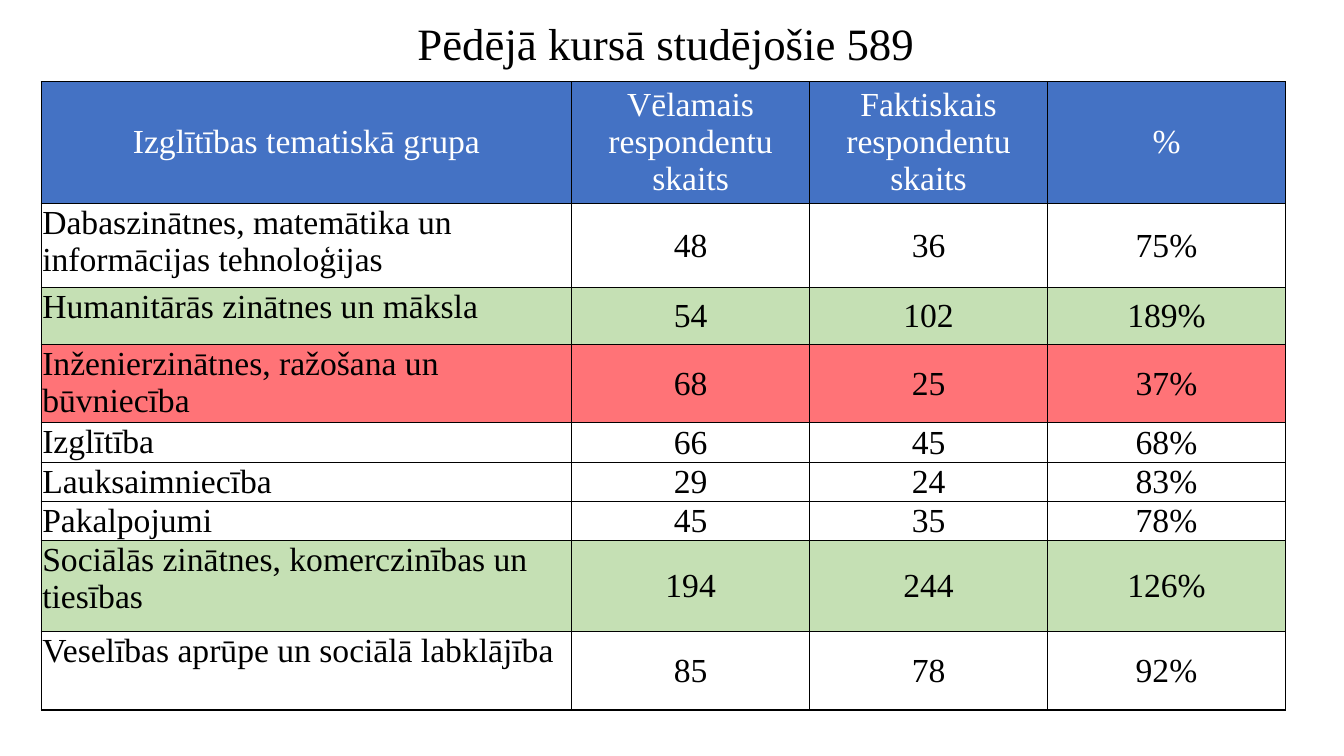
from lxml.etree import SubElement
from pptx import Presentation
from pptx.dml.color import RGBColor
from pptx.enum.text import MSO_ANCHOR, PP_ALIGN
from pptx.oxml.ns import qn
from pptx.util import Inches, Pt

SLIDE_WIDTH, SLIDE_HEIGHT = Inches(13.33), Inches(7.5)
GRID_COLUMNS, GRID_ROWS = 1333, 750
FONT = "Times New Roman"
BLACK, WHITE = "000000", "FFFFFF"
BLUE, GREEN, RED = "4472C4", "C5E0B4", "FF7377"

HEADINGS = ["Izglītības tematiskā grupa", "Vēlamais respondentu skaits",
            "Faktiskais respondentu skaits", "%"]
# Thematic group, wanted respondents, actual respondents, row height
GROUPS = [
    ("Dabaszinātnes, matemātika un informācijas tehnoloģijas", 48, 36, 84),
    ("Humanitārās zinātnes un māksla", 54, 102, 56),
    ("Inženierzinātnes, ražošana un būvniecība", 68, 25, 78),
    ("Izglītība", 66, 45, 39),
    ("Lauksaimniecība", 29, 24, 39),
    ("Pakalpojumi", 45, 35, 39),
    ("Sociālās zinātnes, komerczinības un tiesības", 194, 244, 90),
    ("Veselības aprūpe un sociālā labklājība", 85, 78, 78),
]
HEADER_HEIGHT = 101
COLUMN_WIDTHS = [526, 236, 236, 236]


def across(columns):
    return round(SLIDE_WIDTH * columns / GRID_COLUMNS)


def down(rows):
    return round(SLIDE_HEIGHT * rows / GRID_ROWS)


def color(hex_code):
    return RGBColor.from_string(hex_code)


def write(para, text, size, hex_code, align):
    para.alignment = align
    span = para.add_run()
    span.text = text
    span.font.name = FONT
    span.font.size = Pt(size)
    span.font.bold = False
    span.font.color.rgb = color(hex_code)


def add_borders(cell):
    properties = cell._tc.get_or_add_tcPr()
    for position, side in enumerate(("a:lnL", "a:lnR", "a:lnT", "a:lnB")):
        line = SubElement(properties, qn(side), w=str(Pt(1)))
        fill = SubElement(line, qn("a:solidFill"))
        SubElement(fill, qn("a:srgbClr"), val=BLACK)
        properties.insert(position, line)  # borders must precede the cell fill


def fill_cell(cell, text, fill, text_color, centred):
    cell.fill.solid()
    cell.fill.fore_color.rgb = color(fill)
    add_borders(cell)
    cell.vertical_anchor = MSO_ANCHOR.MIDDLE if centred else MSO_ANCHOR.TOP
    align = PP_ALIGN.CENTER if centred else PP_ALIGN.LEFT
    write(cell.text_frame.paragraphs[0], text, 24, text_color, align)


def tighten(cell):
    cell.margin_left = cell.margin_right = cell.margin_top = Inches(0.01)
    cell.margin_bottom = 0


def row_color(share):
    """Green above the wanted count, red below half of it."""
    if share > 1:
        return GREEN
    return RED if share < 0.5 else WHITE


def add_title(page, text):
    title = page.shapes.title
    title.left, title.top = across(404), down(10)
    title.width, title.height = across(526), down(72)
    title.text_frame.word_wrap = True
    title.text_frame.vertical_anchor = MSO_ANCHOR.MIDDLE
    para = title.text_frame.paragraphs[0]
    para.line_spacing = 0.9
    write(para, text, 32, BLACK, PP_ALIGN.LEFT)


def add_respondent_table(page):
    heights = [HEADER_HEIGHT] + [group[-1] for group in GROUPS]
    table = page.shapes.add_table(
        len(heights), len(COLUMN_WIDTHS), across(41), down(81),
        across(sum(COLUMN_WIDTHS)), down(sum(heights))).table
    table.horz_banding = False
    for column, width in zip(table.columns, COLUMN_WIDTHS):
        column.width = across(width)
    for row, height in zip(table.rows, heights):
        row.height = down(height)

    for index, heading in enumerate(HEADINGS):
        fill_cell(table.cell(0, index), heading, BLUE, WHITE, True)
    for number, (name, wanted, actual, _) in enumerate(GROUPS, start=1):
        share = actual / wanted
        texts = [name, str(wanted), str(actual), f"{share:.0%}"]
        for index, text in enumerate(texts):
            cell = table.cell(number, index)
            fill_cell(cell, text, row_color(share), BLACK, index > 0)
            tighten(cell)


def main():
    deck = Presentation()
    deck.slide_width, deck.slide_height = SLIDE_WIDTH, SLIDE_HEIGHT
    page = deck.slides.add_slide(deck.slide_layouts[5])
    add_title(page, "Pēdējā kursā studējošie 589")
    add_respondent_table(page)
    deck.save("out.pptx")


if __name__ == "__main__":
    main()
